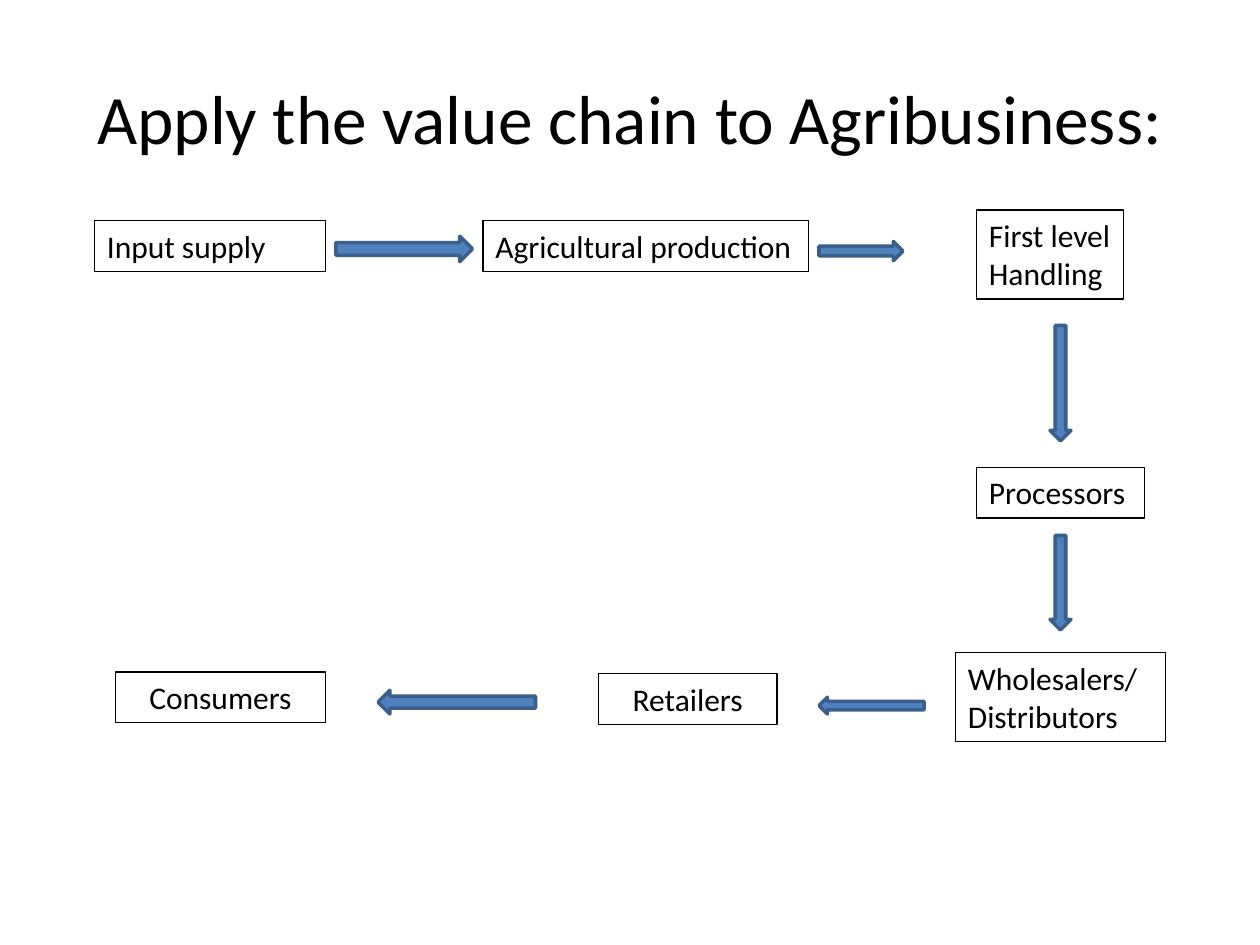
from pptx import Presentation
from pptx.dml.color import RGBColor
from pptx.enum.shapes import MSO_SHAPE
from pptx.enum.text import MSO_ANCHOR, MSO_AUTO_SIZE, PP_ALIGN
from pptx.util import Pt

LEFT, CENTER = PP_ALIGN.LEFT, PP_ALIGN.CENTER
TOP, MIDDLE = MSO_ANCHOR.TOP, MSO_ANCHOR.MIDDLE
NO_FIT, GROW = MSO_AUTO_SIZE.NONE, MSO_AUTO_SIZE.SHAPE_TO_FIT_TEXT
RIGHT_ARROW, DOWN_ARROW = MSO_SHAPE.RIGHT_ARROW, MSO_SHAPE.DOWN_ARROW
BLACK, BLUE, DARK_BLUE = "000000", "4F81BD", "3A5F8C"
ONE_LINE, TWO_LINES = 29.08, 50.9


def color(value):
    return RGBColor.from_string(value)


def add_text(text, left, top, width, height, size=18, align=LEFT,
             anchor=TOP, fit=GROW, border=BLACK):
    shape = slide.shapes.add_textbox(Pt(left), Pt(top), Pt(width), Pt(height))
    if border:
        shape.line.color.rgb = color(border)
        shape.line.width = Pt(0.75)
    frame = shape.text_frame
    frame.word_wrap = True
    frame.auto_size = fit
    frame.vertical_anchor = anchor
    paragraph = frame.paragraphs[0]
    paragraph.alignment = align
    run = paragraph.add_run()
    run.text = text
    run.font.name = "Calibri"
    run.font.size = Pt(size)
    run.font.color.rgb = color(BLACK)


presentation = Presentation()
presentation.slide_width, presentation.slide_height = Pt(720), Pt(540)
slide = presentation.slides.add_slide(presentation.slide_layouts[6])

add_text("Apply the value chain to Agribusiness:", 36, 21.6, 648, 90,
         size=39.6, align=CENTER, anchor=MIDDLE, fit=NO_FIT, border=None)

stages = [
    ("Input supply", 54, 126, 132, ONE_LINE, LEFT),
    ("Agricultural production", 276, 126, 186, ONE_LINE, LEFT),
    ("First level Handling", 558, 120, 84, TWO_LINES, LEFT),
    ("Processors", 558, 267, 96, ONE_LINE, LEFT),
    ("Wholesalers/Distributors", 546, 373, 120, TWO_LINES, LEFT),
    ("Retailers", 342, 385, 102, ONE_LINE, CENTER),
    ("Consumers", 66, 384, 120, ONE_LINE, CENTER),
]
for text, left, top, width, height, align in stages:
    add_text(text, left, top, width, height, align=align)

arrows = [
    (RIGHT_ARROW, 192, 135, 78, 14.5, 0),
    (RIGHT_ARROW, 468, 138, 48, 11, 0),
    (DOWN_ARROW, 600, 186, 12, 66, 0),
    (DOWN_ARROW, 600, 306, 12, 54, 0),
    (RIGHT_ARROW, 468, 398.4, 60, 9.6, 180),
    (RIGHT_ARROW, 216, 394.4, 90, 13.6, 180),
]
for kind, left, top, width, height, rotation in arrows:
    arrow = slide.shapes.add_shape(kind, Pt(left), Pt(top), Pt(width), Pt(height))
    arrow.rotation = rotation
    arrow.shadow.inherit = False
    arrow.fill.solid()
    arrow.fill.fore_color.rgb = color(BLUE)
    arrow.line.color.rgb = color(DARK_BLUE)
    arrow.line.width = Pt(2)

presentation.save("out.pptx")
